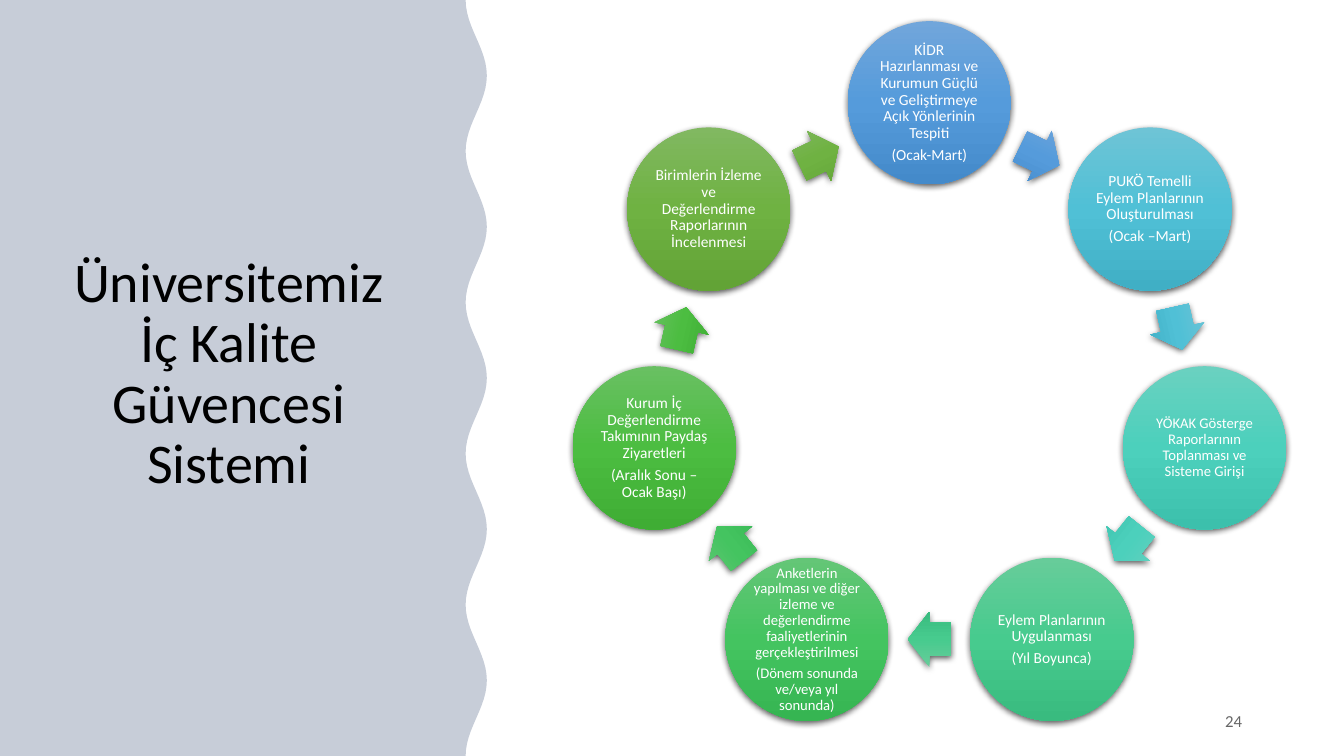
from copy import deepcopy
from dataclasses import dataclass
from math import cos, pi, radians, sin

from lxml import etree
from pptx import Presentation
from pptx.dml.color import RGBColor
from pptx.enum.dml import MSO_FILL
from pptx.enum.shapes import MSO_SHAPE
from pptx.enum.text import MSO_ANCHOR, MSO_AUTO_SIZE, PP_ALIGN
from pptx.oxml.ns import qn
from pptx.util import Emu, Inches, Pt

ELLIPSE = MSO_SHAPE.OVAL
ARROW = MSO_SHAPE.RIGHT_ARROW
GRADIENT = MSO_FILL.GRADIENT
MIDDLE, BOTTOM = MSO_ANCHOR.MIDDLE, MSO_ANCHOR.BOTTOM
CENTER, RIGHT = PP_ALIGN.CENTER, PP_ALIGN.RIGHT
NO_AUTOFIT = MSO_AUTO_SIZE.NONE

CELLS_PER_INCH = 10
COLUMNS, ROWS = 133.33, 75
FONT = "Calibri"
BLACK, WHITE, NAVY = "000000", "FFFFFF", "203864"

RING_COLUMN, RING_ROW, RING_RADIUS = 92.2, 38.2, 28
CIRCLE_SIZE = 16.2
ARROW_WIDTH, ARROW_HEIGHT = 4.3, 5.5
WAVE_COLUMN, WAVE_DEPTH, WAVE_COUNT = 47.25, 1.05, 5
WAVE_STEPS = 120


@dataclass(frozen=True)
class Stage:
    lines: tuple[str, ...]
    colors: tuple[str, str, str]
    size: float = 11


STAGES = (
    Stage(("KİDR Hazırlanması ve Kurumun Güçlü ve Geliştirmeye Açık Yönlerinin Tespiti",
           "(Ocak-Mart)"), ("71A6DB", "559BDB", "448ACA")),
    Stage(("PUKÖ Temelli Eylem Planlarının Oluşturulması", "(Ocak –Mart)"),
          ("6EC4D6", "50C0D6", "40AFC5")),
    Stage(("YÖKAK Gösterge Raporlarının Toplanması ve Sisteme Girişi",),
          ("6AD1C0", "4CD0BC", "3CC0AC"), 10.5),
    Stage(("Eylem Planlarının Uygulanması", "(Yıl Boyunca)"),
          ("67CC9A", "47CB8E", "39BB7F")),
    Stage(("Anketlerin yapılması ve diğer izleme ve değerlendirme faaliyetlerinin "
           "gerçekleştirilmesi", "(Dönem sonunda ve/veya yıl sonunda)"),
          ("64C677", "44C460", "36B552"), 10.5),
    Stage(("Kurum İç Değerlendirme Takımının Paydaş Ziyaretleri",
           "(Aralık Sonu – Ocak Başı)"), ("69C062", "4CBD41", "3FAD34")),
    Stage(("Birimlerin İzleme ve Değerlendirme Raporlarının İncelenmesi",),
          ("81B861", "6FB242", "62A336")),
)


def cells(count: float) -> Emu:
    return Inches(count / CELLS_PER_INCH)


def color(value: str) -> RGBColor:
    return RGBColor.from_string(value)


def set_opacity(element, percent: int) -> None:
    solid = element.find(".//" + qn("a:srgbClr"))
    etree.SubElement(solid, qn("a:alpha")).set("val", str(percent * 1000))


def add_span(para, text: str, size: float, text_color: str):
    span = para.add_run()
    span.text = text
    span.font.name = FONT
    span.font.size = Pt(size)
    span.font.color.rgb = color(text_color)
    return span


def set_space_after_share(para, percent: int) -> None:
    para.space_after = Pt(0)
    spacing = para._p.pPr.find(qn("a:spcAft"))
    spacing.remove(spacing[0])
    etree.SubElement(spacing, qn("a:spcPct")).set("val", str(percent * 1000))


def add_shadow(shape) -> None:
    shape.shadow.inherit = False
    effects = shape.element.spPr.find(qn("a:effectLst"))
    shadow = etree.SubElement(effects, qn("a:outerShdw"), blurRad=str(Pt(4.5)),
                              dist=str(Pt(1.5)), dir="5400000", rotWithShape="0")
    etree.SubElement(shadow, qn("a:srgbClr"), val=BLACK)
    set_opacity(shadow, 63)


def fill_gradient(shape, colors: tuple[str, str, str]) -> None:
    shape.fill.gradient()
    shape.fill.gradient_angle = 270
    stop_list = shape.element.spPr.find(".//" + qn("a:gsLst"))
    stop_list.insert(1, deepcopy(stop_list[0]))
    for stop, position, value in zip(shape.fill.gradient_stops, (0, 0.5, 1), colors):
        stop.position = position
        stop.color.rgb = color(value)


def add_ring_shape(page, kind, angle: float, radius: float, width: float,
                   height: float, colors: tuple[str, str, str]):
    column = RING_COLUMN + radius * sin(radians(angle))
    row = RING_ROW - radius * cos(radians(angle))
    shape = page.shapes.add_shape(kind, cells(column - width / 2), cells(row - height / 2),
                                  cells(width), cells(height))
    fill_gradient(shape, colors)
    shape.line.fill.background()
    add_shadow(shape)
    return shape


def add_stage(page, stage: Stage, angle: float, step: float) -> None:
    circle = add_ring_shape(page, ELLIPSE, angle, RING_RADIUS, CIRCLE_SIZE, CIRCLE_SIZE,
                            stage.colors)
    frame = circle.text_frame
    frame.word_wrap = True
    frame.vertical_anchor = MIDDLE
    frame.margin_left = frame.margin_right = cells(0.2)
    frame.margin_top = frame.margin_bottom = cells(0.2)
    for index, line in enumerate(stage.lines):
        para = frame.add_paragraph() if index else frame.paragraphs[0]
        para.alignment = CENTER
        para.line_spacing = 0.9
        set_space_after_share(para, 35)
        add_span(para, line, stage.size, WHITE)

    turn = angle + step / 2
    arrow = add_ring_shape(page, ARROW, turn, RING_RADIUS * cos(radians(step / 2)),
                           ARROW_WIDTH, ARROW_HEIGHT, stage.colors)
    arrow.adjustments[0] = 0.6
    arrow.adjustments[1] = 0.5
    arrow.rotation = turn


def add_wave_panel(page) -> None:
    builder = page.shapes.build_freeform(0, 0)
    edge = []
    for index in range(WAVE_STEPS + 1):
        share = index / WAVE_STEPS
        column = WAVE_COLUMN - WAVE_DEPTH * cos(2 * pi * WAVE_COUNT * share)
        edge.append((cells(column), cells(ROWS * share)))
    builder.add_line_segments([*edge, (0, cells(ROWS))], close=True)
    panel = builder.convert_to_shape()
    panel.shadow.inherit = False
    panel.line.fill.background()
    panel.fill.solid()
    panel.fill.fore_color.rgb = color(NAVY)
    set_opacity(panel.element, 25)
    page.shapes._spTree.insert(2, panel.element)


def add_title(page, text: str) -> None:
    title = page.shapes.title
    title.left, title.top = cells(5), cells(7.9)
    title.width, title.height = cells(35.4), cells(41.8)
    frame = title.text_frame
    frame.word_wrap = True
    frame.auto_size = NO_AUTOFIT
    frame.vertical_anchor = BOTTOM
    para = frame.paragraphs[0]
    para.alignment = CENTER
    para.line_spacing = 0.9
    add_span(para, text, 40, BLACK)


def add_page_number(page, text: str) -> None:
    box = page.shapes.add_textbox(cells(94.2), cells(69.5), cells(30), cells(4))
    frame = box.text_frame
    frame.word_wrap = True
    frame.vertical_anchor = MIDDLE
    para = frame.paragraphs[0]
    para.alignment = RIGHT
    para.space_after = Pt(6)
    span = add_span(para, text, 12, BLACK)
    set_opacity(span._r, 60)


def main() -> None:
    deck = Presentation()
    deck.slide_width, deck.slide_height = cells(COLUMNS), cells(ROWS)
    page = deck.slides.add_slide(deck.slide_layouts[5])
    add_wave_panel(page)
    add_title(page, "Üniversitemiz İç Kalite Güvencesi Sistemi")
    add_page_number(page, "24")
    step = 360 / len(STAGES)
    for index, stage in enumerate(STAGES):
        add_stage(page, stage, index * step, step)
    deck.save("out.pptx")


if __name__ == "__main__":
    main()
